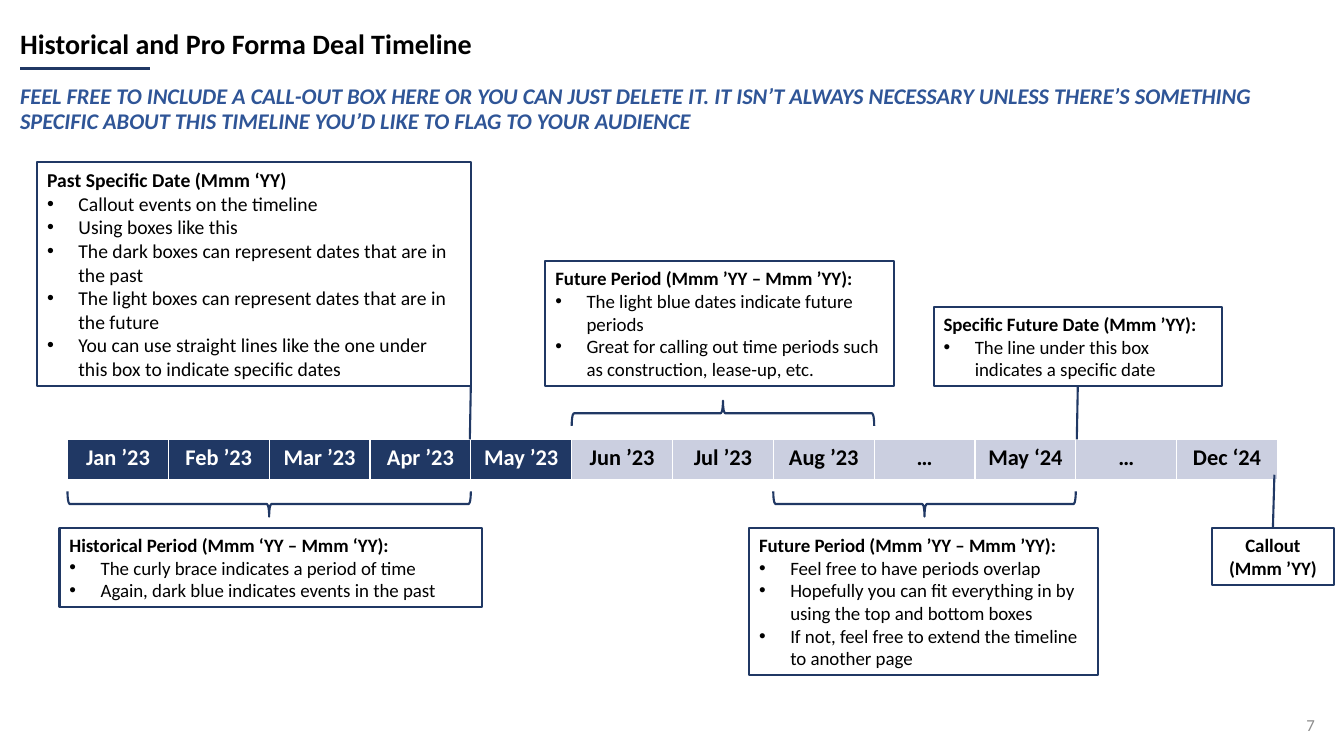
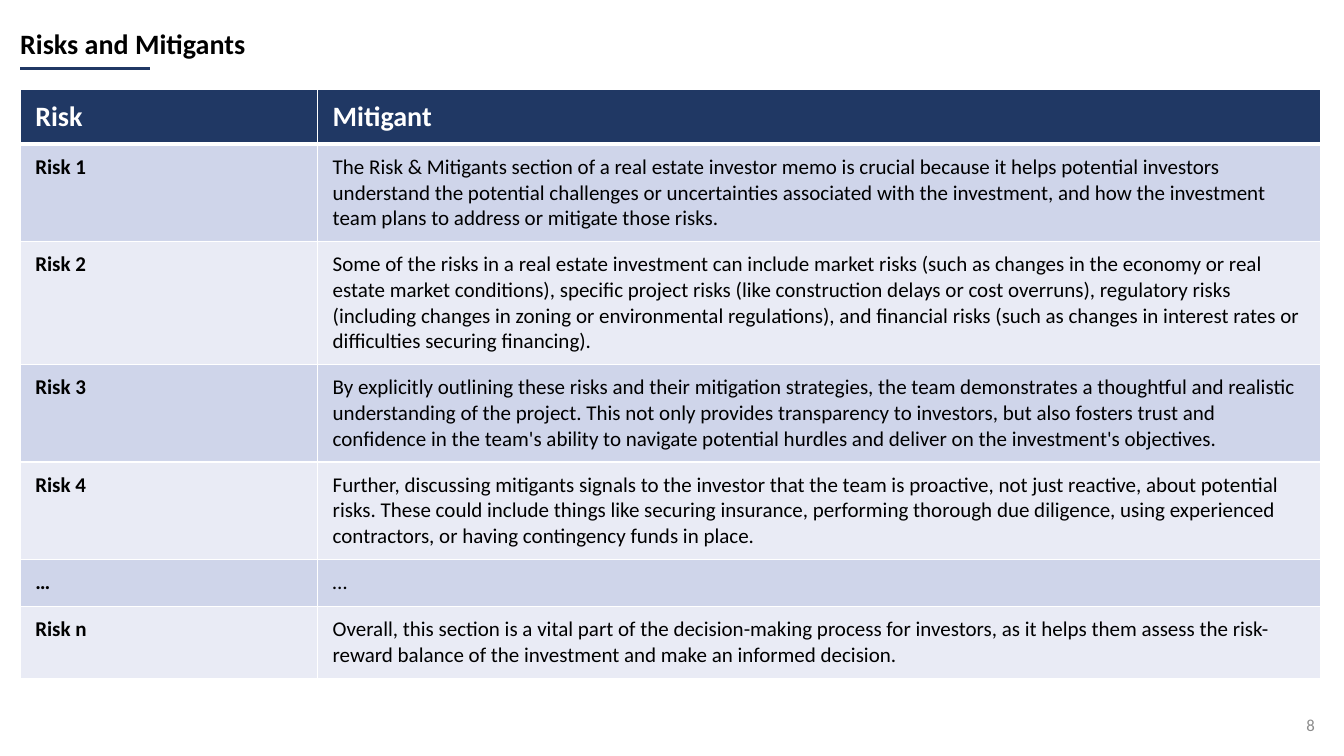
from pptx import Presentation
from pptx.dml.color import RGBColor
from pptx.enum.shapes import MSO_CONNECTOR, MSO_SHAPE
from pptx.enum.text import MSO_ANCHOR, MSO_AUTO_SIZE, PP_ALIGN
from pptx.oxml.ns import qn
from pptx.util import Inches, Pt
from lxml import etree

LEFT, CENTER, RIGHT = PP_ALIGN.LEFT, PP_ALIGN.CENTER, PP_ALIGN.RIGHT
TOP, MIDDLE = MSO_ANCHOR.TOP, MSO_ANCHOR.MIDDLE
RECTANGLE, BRACE = MSO_SHAPE.RECTANGLE, MSO_SHAPE.LEFT_BRACE
STRAIGHT = MSO_CONNECTOR.STRAIGHT

FONT = "Calibri"
COLORS = {
    "navy": "203864", "blue": "2F5597", "future": "CBCFE0",
    "band": "CFD5EA", "pale": "E9EBF5", "gray": "8C8C8C",
    "black": "000000", "white": "FFFFFF",
}
SLIDE_WIDTH, SLIDE_HEIGHT = 13.33, 7.5
MARGIN = 0.2
FIRST_PAGE = 7

# Timeline content
TIMELINE_TITLE = "Historical and Pro Forma Deal Timeline"
TIMELINE_NOTE = (
    "FEEL FREE TO INCLUDE A CALL-OUT BOX HERE OR YOU CAN JUST DELETE IT. "
    "IT ISN’T ALWAYS NECESSARY UNLESS THERE’S SOMETHING SPECIFIC ABOUT THIS "
    "TIMELINE YOU’D LIKE TO FLAG TO YOUR AUDIENCE")
PERIODS = ["Jan ’23", "Feb ’23", "Mar ’23", "Apr ’23", "May ’23", "Jun ’23",
           "Jul ’23", "Aug ’23", "…", "May ‘24", "…", "Dec ‘24"]
PAST_COUNT = 5
TIMELINE_LEFT, TIMELINE_TOP, PERIOD_WIDTH, TIMELINE_HEIGHT = 0.67, 4.36, 1, 0.41
ABOVE_BOTTOM, BELOW_TOP = 3.83, 5.24  # edges of the boxes facing the timeline

# Boxes: name -> (above timeline, left, width, height, size, heading, bullets)
BOXES = {
    "past date": (True, 0.37, 4.3, 2.22, 14, "Past Specific Date (Mmm ‘YY)", [
        "Callout events on the timeline",
        "Using boxes like this",
        "The dark boxes can represent dates that are in the past",
        "The light boxes can represent dates that are in the future",
        "You can use straight lines like the one under this box to indicate "
        "specific dates"]),
    "history": (False, 0.59, 4.19, 0.78, 13.5,
                "Historical Period (Mmm ‘YY – Mmm ‘YY):", [
                    "The curly brace indicates a period of time",
                    "Again, dark blue indicates events in the past"]),
    "future above": (True, 5.41, 3.46, 1.24, 13.5,
                     "Future Period (Mmm ’YY – Mmm ’YY):", [
                         "The light blue dates indicate future periods",
                         "Great for calling out time periods such as "
                         "construction, lease-up, etc."]),
    "future below": (False, 7.43, 3.46, 1.46, 13.5,
                     "Future Period (Mmm ’YY – Mmm ’YY):", [
                         "Feel free to have periods overlap",
                         "Hopefully you can fit everything in by using the "
                         "top and bottom boxes",
                         "If not, feel free to extend the timeline to "
                         "another page"]),
    "future date": (True, 9.26, 2.86, 0.78, 13.5,
                    "Specific Future Date (Mmm ’YY):",
                    ["The line under this box indicates a specific date"]),
    "callout": (False, 12.02, 1.21, 0.56, 13.5, "Callout (Mmm ’YY)", []),
}
# Braces: (first period, end period, middle height, rotation)
BRACES = [(0, 4, 5, 270), (5, 8, 4.1, 90), (7, 10, 5, 270)]

# Risk content
RISKS_TITLE = "Risks and Mitigants"
RISK_COLUMNS = [2.95, 9.95]
RISK_TABLE_TOP = 0.89
# Rows: (height, risk, mitigant)
RISKS = [
    (0.52, "Risk", "Mitigant"),
    (0.96, "Risk 1",
     "The Risk & Mitigants section of a real estate investor memo is crucial "
     "because it helps potential investors understand the potential challenges "
     "or uncertainties associated with the investment, and how the investment "
     "team plans to address or mitigate those risks."),
    (1.22, "Risk 2",
     "Some of the risks in a real estate investment can include market risks "
     "(such as changes in the economy or real estate market conditions), "
     "specific project risks (like construction delays or cost overruns), "
     "regulatory risks (including changes in zoning or environmental "
     "regulations), and financial risks (such as changes in interest rates or "
     "difficulties securing financing)."),
    (0.96, "Risk 3",
     "By explicitly outlining these risks and their mitigation strategies, the "
     "team demonstrates a thoughtful and realistic understanding of the "
     "project. This not only provides transparency to investors, but also "
     "fosters trust and confidence in the team's ability to navigate potential "
     "hurdles and deliver on the investment's objectives."),
    (0.96, "Risk 4",
     "Further, discussing mitigants signals to the investor that the team is "
     "proactive, not just reactive, about potential risks. These could include "
     "things like securing insurance, performing thorough due diligence, using "
     "experienced contractors, or having contingency funds in place."),
    (0.47, "…", "…"),
    (0.7, "Risk n",
     "Overall, this section is a vital part of the decision-making process for "
     "investors, as it helps them assess the risk-reward balance of the "
     "investment and make an informed decision."),
]


def color(name):
    return RGBColor.from_string(COLORS[name])


def write(paragraph, text, size, ink="black", bold=False, italic=False,
          align=LEFT, spacing=None):
    paragraph.alignment = align
    if spacing:
        paragraph.line_spacing = spacing
    run = paragraph.add_run()
    run.text = text
    run.font.name = FONT
    run.font.size = Pt(size)
    run.font.bold = bold
    run.font.italic = italic
    run.font.color.rgb = color(ink)


def set_frame(frame, anchor=TOP, left_inset=0.1):
    frame.word_wrap = True
    frame.auto_size = MSO_AUTO_SIZE.NONE
    frame.vertical_anchor = anchor
    frame.margin_left, frame.margin_right = Inches(left_inset), Inches(0.1)
    frame.margin_top = frame.margin_bottom = Inches(0.05)


def add_text_box(slide, left, top, width, height, anchor=TOP, left_inset=0.1):
    box = slide.shapes.add_textbox(*map(Inches, (left, top, width, height)))
    set_frame(box.text_frame, anchor, left_inset)
    return box.text_frame.paragraphs[0]


def add_line(slide, start, end, width=1.5):
    line = slide.shapes.add_connector(STRAIGHT, *map(Inches, (*start, *end)))
    line.line.color.rgb = color("navy")
    line.line.width = Pt(width)
    etree.SubElement(line._element.spPr, qn("a:effectLst"))
    return line


def add_outline(slide, kind, left, top, width, height):
    shape = slide.shapes.add_shape(
        kind, *map(Inches, (left, top, width, height)))
    shape.shadow.inherit = False
    shape.fill.background()
    shape.line.color.rgb = color("navy")
    shape.line.width = Pt(1.5)
    return shape


def add_bullet(paragraph):
    properties = paragraph._p.get_or_add_pPr()
    properties.set("marL", str(Inches(0.31)))
    properties.set("indent", str(-Inches(0.31)))
    etree.SubElement(properties, qn("a:buFont"), typeface="Arial")
    etree.SubElement(properties, qn("a:buChar"), char="•")


def add_table(slide, left, top, columns, rows):
    sizes = (left, top, sum(columns), sum(rows))
    table = slide.shapes.add_table(
        len(rows), len(columns), *map(Inches, sizes)).table
    table.first_row = table.horz_banding = False
    for column, width in zip(table.columns, columns):
        column.width = Inches(width)
    for row, height in zip(table.rows, rows):
        row.height = Inches(height)
    return table


def style_cell(cell, fill, side_inset, edge_inset, bottom_border=1):
    cell.margin_left = cell.margin_right = Inches(side_inset)
    cell.margin_top = cell.margin_bottom = Inches(edge_inset)
    properties = cell._tc.get_or_add_tcPr()
    for side, width in zip("LRTB", (1, 1, 1, bottom_border)):
        border = etree.SubElement(
            properties, qn(f"a:ln{side}"), w=str(Pt(width)))
        solid = etree.SubElement(border, qn("a:solidFill"))
        etree.SubElement(solid, qn("a:srgbClr"), val=COLORS["white"])
    cell.fill.solid()
    cell.fill.fore_color.rgb = color(fill)


def add_slide(presentation, title_text):
    """Start a slide with the shared title, rule and page number."""
    slide = presentation.slides.add_slide(presentation.slide_layouts[5])
    title = slide.shapes.title
    title.left, title.top, title.width, title.height = map(
        Inches, (MARGIN, 0.22, 10.66, 0.46))
    set_frame(title.text_frame, MIDDLE, 0)
    write(title.text_frame.paragraphs[0], title_text, 20, bold=True, spacing=0.9)
    add_line(slide, (MARGIN, 0.68), (1.49, 0.68), 2.25)
    page = FIRST_PAGE + len(presentation.slides) - 1
    write(add_text_box(slide, 12.54, 6.96, 0.6, 0.46, MIDDLE),
          str(page), 12, "gray", align=RIGHT)
    return slide


def build_timeline(presentation):
    slide = add_slide(presentation, TIMELINE_TITLE)
    note = add_text_box(slide, MARGIN, 0.8, 12.94, 0.6, left_inset=0)
    write(note, TIMELINE_NOTE, 16, "blue", bold=True, italic=True, spacing=0.9)

    # Strip of periods
    table = add_table(slide, TIMELINE_LEFT, TIMELINE_TOP,
                      [PERIOD_WIDTH] * len(PERIODS), [TIMELINE_HEIGHT])
    for index, period in enumerate(PERIODS):
        fill, ink = (("navy", "white") if index < PAST_COUNT
                     else ("future", "black"))
        cell = table.cell(0, index)
        style_cell(cell, fill, 0.09, 0.05, bottom_border=3)
        write(cell.text_frame.paragraphs[0], period, 16, ink, bold=True,
              align=CENTER)

    # Event boxes
    boxes = {}
    for name, (above, left, width, height, size, heading, bullets) in BOXES.items():
        top = ABOVE_BOTTOM - height if above else BELOW_TOP
        box = boxes[name] = add_outline(slide, RECTANGLE, left, top, width, height)
        frame = box.text_frame
        set_frame(frame, MIDDLE)
        write(frame.paragraphs[0], heading, size, bold=True,
              align=LEFT if bullets else CENTER)
        for bullet in bullets:
            paragraph = frame.add_paragraph()
            add_bullet(paragraph)
            write(paragraph, bullet, size)

    # Braces over whole periods, turned about their middle
    depth = 0.25
    for first, end, middle, rotation in BRACES:
        length = (end - first) * PERIOD_WIDTH
        center = TIMELINE_LEFT + (first + end) / 2 * PERIOD_WIDTH
        brace = add_outline(slide, BRACE, center - depth / 2,
                            middle - length / 2, depth, length)
        brace.rotation = rotation

    # Lines from boxes to single dates
    add_line(slide, (4.67, ABOVE_BOTTOM), (4.66, TIMELINE_TOP))
    future_line = add_line(slide, (10.69, ABOVE_BOTTOM), (10.68, TIMELINE_TOP))
    future_line.begin_connect(boxes["future date"], 2)
    callout_line = add_line(slide, (12.64, 4.71), (12.63, BELOW_TOP))
    callout_line.end_connect(boxes["callout"], 0)


def build_risks(presentation):
    slide = add_slide(presentation, RISKS_TITLE)
    table = add_table(slide, MARGIN, RISK_TABLE_TOP, RISK_COLUMNS,
                      [height for height, *_ in RISKS])
    for row, (_, *texts) in enumerate(RISKS):
        header = row == 0
        fill = "navy" if header else ("pale", "band")[row % 2]
        for column, text in enumerate(texts):
            cell = table.cell(row, column)
            style_cell(cell, fill, 0.15, 0.1, bottom_border=3 if header else 1)
            write(cell.text_frame.paragraphs[0], text, 20 if header else 15,
                  "white" if header else "black", bold=header or column == 0)


def main():
    presentation = Presentation()
    presentation.slide_width = Inches(SLIDE_WIDTH)
    presentation.slide_height = Inches(SLIDE_HEIGHT)
    build_timeline(presentation)
    build_risks(presentation)
    presentation.save("out.pptx")


if __name__ == "__main__":
    main()
